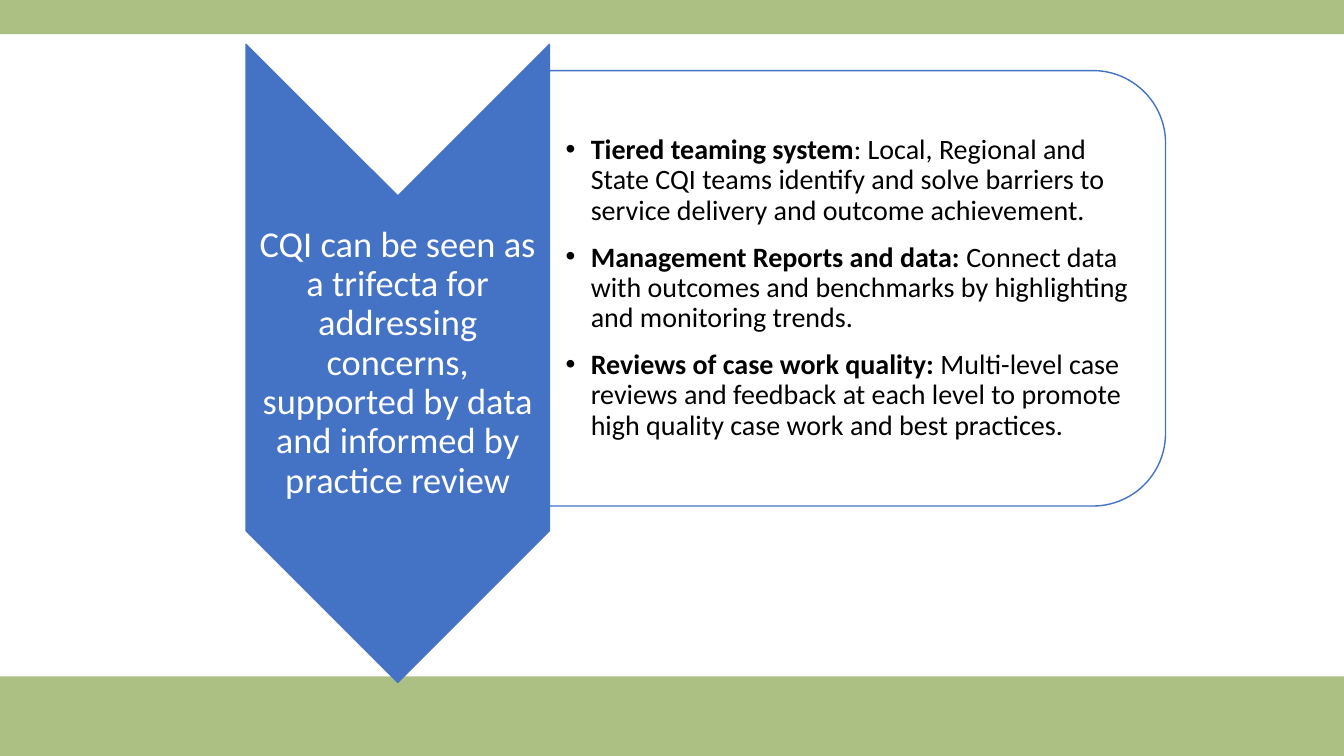
from lxml import etree
from pptx import Presentation
from pptx.dml.color import RGBColor
from pptx.enum.shapes import MSO_SHAPE as SHAPE
from pptx.enum.text import MSO_ANCHOR as ANCHOR, PP_ALIGN as ALIGN
from pptx.oxml.ns import qn
from pptx.util import Inches, Pt

GREEN = RGBColor(0xAD, 0xC0, 0x84)
BLUE = RGBColor(0x44, 0x72, 0xC4)
WHITE = RGBColor(0xFF, 0xFF, 0xFF)
BLACK = RGBColor(0, 0, 0)
FONT = "Calibri"
WIDTH, HEIGHT = 13.33, 7.5

MESSAGE = ("CQI can be seen as a trifecta for addressing concerns, "
           "supported by data and informed by practice review")
POINTS = [
    [("Tiered teaming system", True),
     (": Local, Regional and State CQI teams identify and solve barriers to "
      "service delivery and outcome achievement.", False)],
    [("Management Reports and data: ", True),
     ("Connect data with outcomes and benchmarks by highlighting and "
      "monitoring trends.", False)],
    [("Reviews of case work quality: ", True),
     ("Multi-level case reviews and feedback at each level to promote high "
      "quality case work and best practices.", False)],
]


def add_shape(s, kind, x, y, w, h, fill, line=None, turned=False):
    """Fill the box x, y, w, h with a shape; turned rotates it by 90 degrees."""
    if turned:
        x, y, w, h = x + (w - h) / 2, y + (h - w) / 2, h, w
    sp = s.shapes.add_shape(kind, Inches(x), Inches(y), Inches(w), Inches(h))
    sp.shadow.inherit = False
    sp.rotation = 90 if turned else 0
    sp.fill.solid()
    sp.fill.fore_color.rgb = fill
    if line is None:
        sp.line.fill.background()
    else:
        sp.line.color.rgb = line
        sp.line.width = Pt(1)
    return sp


def add_bullet(p, indent):
    p_pr = p._p.get_or_add_pPr()
    p_pr.set("marL", str(Inches(indent)))
    p_pr.set("indent", str(-Inches(indent)))
    etree.SubElement(p_pr, qn("a:buFont")).set("typeface", "Arial")
    etree.SubElement(p_pr, qn("a:buChar")).set("char", "•")


def add_text(s, paragraphs, x, y, w, h, size, color, align=ALIGN.LEFT,
             inset=0.02, left_inset=None, bullets=False, after=0):
    """Each paragraph is a list of (text, bold) runs."""
    box = s.shapes.add_textbox(Inches(x), Inches(y), Inches(w), Inches(h))
    tf = box.text_frame
    tf.word_wrap = True
    tf.vertical_anchor = ANCHOR.MIDDLE
    tf.margin_top = tf.margin_right = tf.margin_bottom = Inches(inset)
    tf.margin_left = Inches(inset if left_inset is None else left_inset)
    for i, runs in enumerate(paragraphs):
        p = tf.add_paragraph() if i else tf.paragraphs[0]
        p.alignment = align
        p.line_spacing = 0.9
        p.space_after = Pt(after)
        if bullets:
            add_bullet(p, 0.25)
        for text, bold in runs:
            r = p.add_run()
            r.text = text
            r.font.name = FONT
            r.font.size = Pt(size)
            r.font.bold = bold
            r.font.color.rgb = color


def add_bands(s, top, bottom):
    add_shape(s, SHAPE.RECTANGLE, 0, HEIGHT - bottom, WIDTH, bottom, GREEN)
    add_shape(s, SHAPE.RECTANGLE, 0, 0, WIDTH, top, GREEN)


def add_message_arrow(s, x, y, w, h):
    add_shape(s, SHAPE.CHEVRON, x, y, w, h, BLUE, BLUE, turned=True)
    point = w / 2
    add_text(s, [[(MESSAGE, False)]], x, y + point, w, h - 2 * point,
             26, WHITE, align=ALIGN.CENTER)


def add_points_panel(s, x, y, w, h):
    add_shape(s, SHAPE.ROUND_2_SAME_RECTANGLE, x, y, w, h, WHITE, BLUE,
              turned=True)
    margin = 0.21
    add_text(s, POINTS, x, y + margin, w - margin, h - 2 * margin, 20, BLACK,
             inset=0.01, left_inset=0.16, bullets=True, after=12)


def main():
    prs = Presentation()
    prs.slide_width, prs.slide_height = Inches(WIDTH), Inches(HEIGHT)
    s = prs.slides.add_slide(prs.slide_layouts[6])
    add_bands(s, 0.34, 0.79)
    add_message_arrow(s, 2.44, 0.44, 3.01, 6.33)
    add_points_panel(s, 5.45, 0.7, 6.11, 4.32)
    prs.save("out.pptx")


if __name__ == "__main__":
    main()
